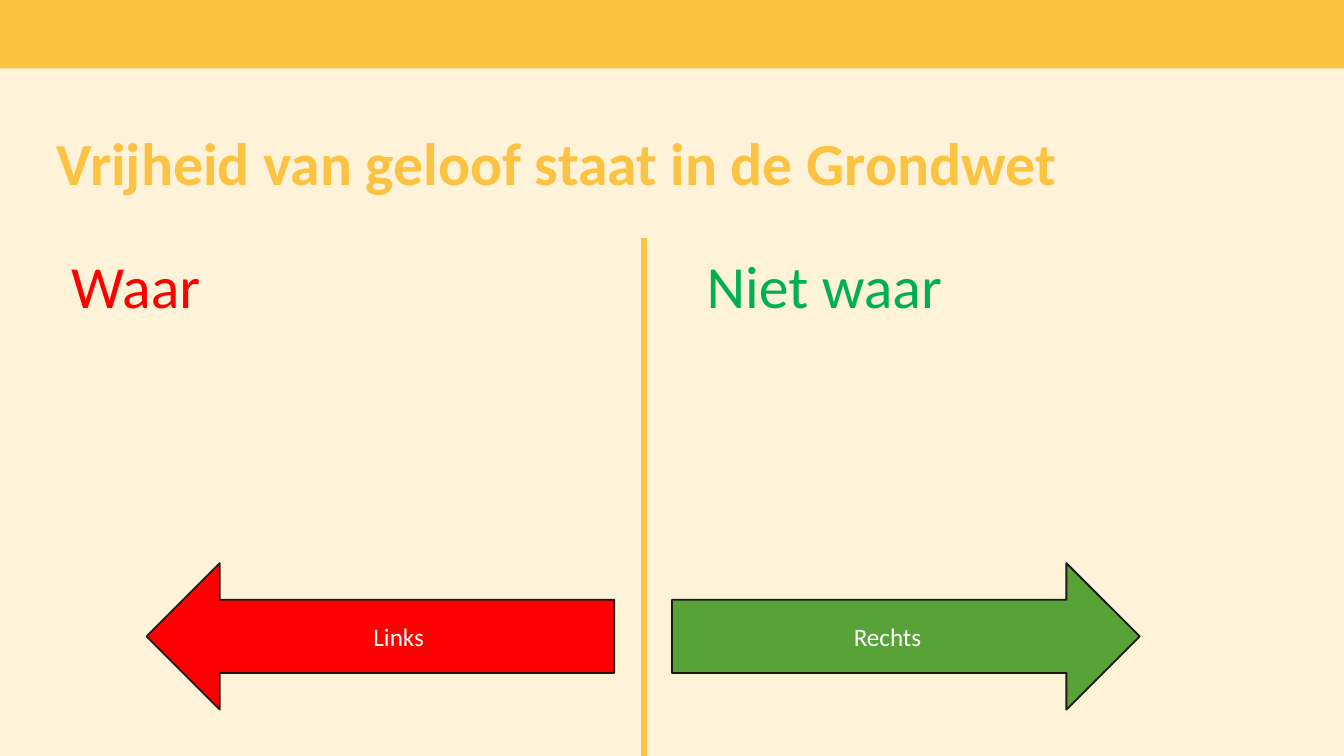
"""Build a true-or-false quiz slide about freedom of religion."""
from lxml import etree
from pptx import Presentation
from pptx import util as u
from pptx.dml.color import RGBColor
from pptx.enum import shapes, text
from pptx.oxml.ns import qn

CREAM = RGBColor(0xFE, 0xF3, 0xD9)
YELLOW = RGBColor(0xFC, 0xC2, 0x41)
RED = RGBColor(0xFF, 0x00, 0x00)
BRIGHT_GREEN = RGBColor(0x00, 0xB0, 0x50)
GREEN = RGBColor(0x58, 0xA3, 0x37)
BLACK = RGBColor(0x1A, 0x19, 0x18)
WHITE = RGBColor(0xFF, 0xFF, 0xFF)


def write(box, words, size=32, color=WHITE, bold=False, align=text.PP_ALIGN.LEFT,
          anchor=text.MSO_ANCHOR.TOP, spacing=None):
    frame = box.text_frame
    frame.word_wrap = True
    frame.vertical_anchor = anchor
    para = frame.paragraphs[0]
    para.alignment = align
    para.line_spacing = spacing
    span = para.add_run()
    span.text = words
    span.font.name = "Calibri"
    span.font.size = u.Pt(size)
    span.font.bold = bold
    span.font.color.rgb = color
    return frame


deck = Presentation()
deck.slide_width = u.Inches(10)
deck.slide_height = deck.slide_width * 9 // 16
page = deck.slides.add_slide(deck.slide_layouts[6])
page.background.fill.solid()
page.background.fill.fore_color.rgb = CREAM

band = page.shapes.add_shape(
    shapes.MSO_SHAPE.RECTANGLE, 0, 0, deck.slide_width, u.Inches(0.51))
band.shadow.inherit = False
band.fill.solid()
band.fill.fore_color.rgb = YELLOW
band.line.fill.background()

title = page.shapes.add_textbox(
    u.Inches(0.42), u.Inches(0.92), u.Inches(7.49), u.Inches(0.64))
frame = write(title, "Vrijheid van geloof staat in de Grondwet",
              color=YELLOW, bold=True, spacing=u.Pt(36))
frame.margin_left = frame.margin_right = frame.margin_bottom = 0
frame.margin_top = u.Inches(0.05)

divider = page.shapes.add_connector(
    shapes.MSO_CONNECTOR.STRAIGHT,
    u.Inches(4.79), u.Inches(1.77), u.Inches(4.79), deck.slide_height)
divider.line.color.rgb = YELLOW
divider.line.width = u.Pt(3)
etree.SubElement(divider._element.spPr, qn("a:effectLst"))

answers = [
    ("Waar", 0.43, 2.95, RED),
    ("Niet waar", 5.16, 2.43, BRIGHT_GREEN),
]
for words, left, width, color in answers:
    box = page.shapes.add_textbox(
        u.Inches(left), u.Inches(1.8), u.Inches(width), u.Inches(0.64))
    write(box, words, color=color)
    box.text_frame.auto_size = text.MSO_AUTO_SIZE.SHAPE_TO_FIT_TEXT

directions = [
    ("Rechts", shapes.MSO_SHAPE.RIGHT_ARROW, 5, GREEN),
    ("Links", shapes.MSO_SHAPE.LEFT_ARROW, 1.09, RED),
]
for words, kind, left, color in directions:
    arrow = page.shapes.add_shape(
        kind, u.Inches(left), u.Inches(4.19), u.Inches(3.48), u.Inches(1.09))
    arrow.shadow.inherit = False
    arrow.fill.solid()
    arrow.fill.fore_color.rgb = color
    arrow.line.color.rgb = BLACK
    arrow.line.width = u.Pt(1)
    write(arrow, words, size=13.5, align=text.PP_ALIGN.CENTER,
          anchor=text.MSO_ANCHOR.MIDDLE)

deck.save("out.pptx")
